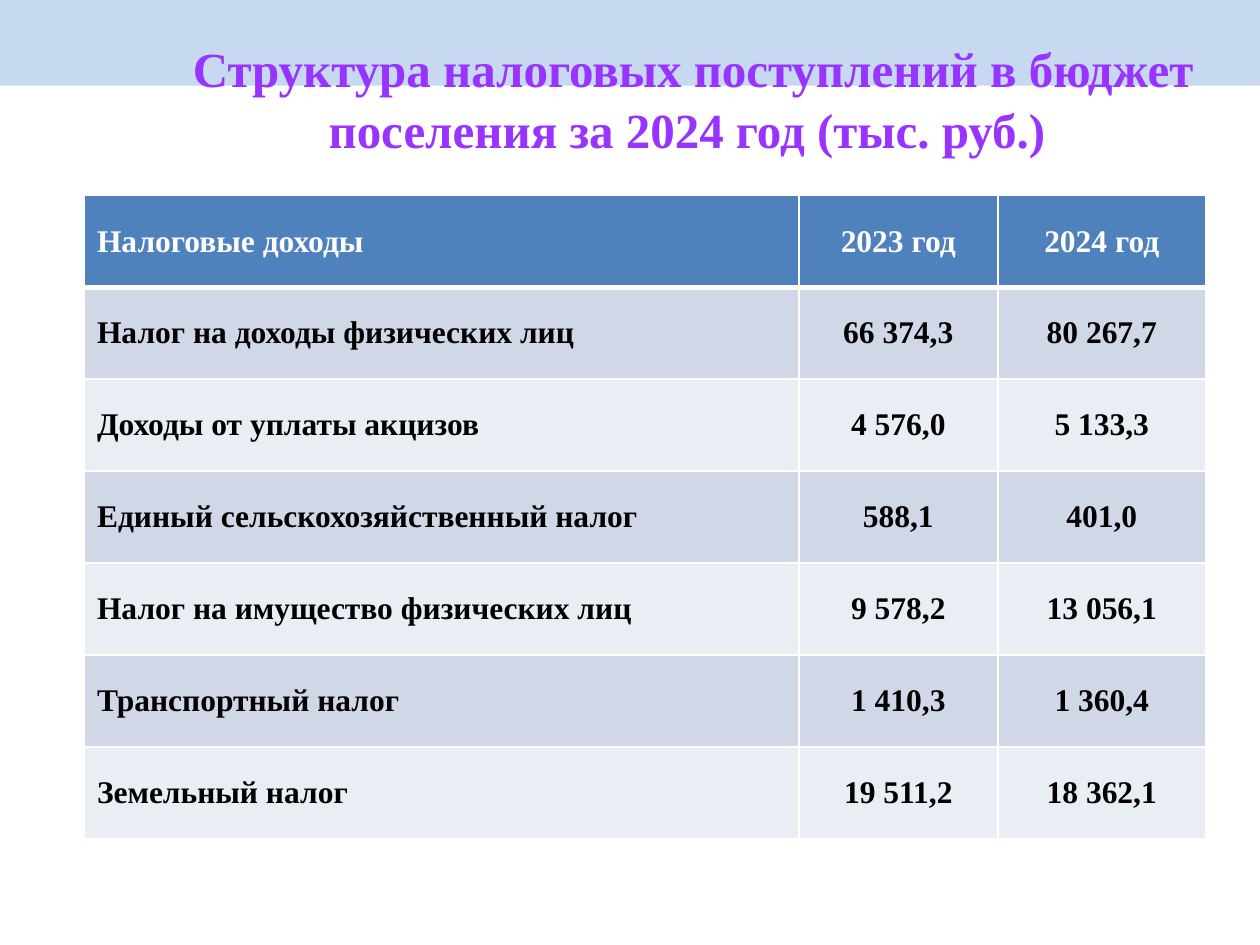
from lxml.etree import SubElement
from pptx import Presentation
from pptx.dml.color import RGBColor
from pptx.enum.shapes import MSO_SHAPE as Shape
from pptx.enum.text import MSO_ANCHOR as Anchor, MSO_AUTO_SIZE as AutoSize, PP_ALIGN as Align
from pptx.oxml import parse_xml
from pptx.oxml.ns import nsdecls, qn
from pptx.util import Inches, Pt


def color(value):
    return RGBColor.from_string(value)


def line_xml(tag, hex_color, points):
    line = parse_xml(f'<a:{tag} {nsdecls("a")} w="{int(Pt(points))}"/>')
    fill = SubElement(line, qn("a:solidFill"))
    SubElement(fill, qn("a:srgbClr")).set("val", hex_color)
    return line


class SlideBuilder:
    font = "Times New Roman"
    white, black = "FFFFFF", "000000"
    band_fill, title_color, title_outline = "C6D9F1", "9933FF", "467AB8"
    header_fill = "4F81BD"
    row_fills = ("D0D8E8", "E9EDF4")

    def __init__(self, page):
        self.page = page

    def add_text(self, para, text, size, hex_color, align):
        para.alignment = align
        span = para.add_run()
        span.text = text
        span.font.name = self.font
        span.font.size = Pt(size)
        span.font.bold = True
        span.font.color.rgb = color(hex_color)
        return span

    def band(self, left, top, width, height):
        box = self.page.shapes.add_shape(
            Shape.RECTANGLE, Inches(left), Inches(top), Inches(width), Inches(height))
        box.shadow.inherit = False
        box.fill.solid()
        box.fill.fore_color.rgb = color(self.band_fill)
        box.line.fill.background()
        # Send the band behind the title
        self.page.shapes._spTree.insert(2, box._element)

    def title(self, text, left, top, width, height):
        box = self.page.shapes.title
        box.left, box.top = Inches(left), Inches(top)
        box.width, box.height = Inches(width), Inches(height)
        frame = box.text_frame
        frame.word_wrap = True
        frame.auto_size = AutoSize.NONE
        frame.vertical_anchor = Anchor.TOP
        frame.margin_top = Inches(0.07)
        para = frame.paragraphs[0]
        para.line_spacing = 1.05
        span = self.add_text(para, text, 28, self.title_color, Align.CENTER)
        span.font._element.insert(0, line_xml("ln", self.title_outline, 0.83))

    def cell(self, cell, text, fill, hex_color, align, top, bottom):
        cell.fill.solid()
        cell.fill.fore_color.rgb = color(fill)
        cell.vertical_anchor = Anchor.MIDDLE
        self.add_text(cell.text_frame.paragraphs[0], text, 18, hex_color, align)
        borders = (("lnL", 1), ("lnR", 1), ("lnT", top), ("lnB", bottom))
        for index, (tag, points) in enumerate(borders):
            cell._tc.tcPr.insert(index, line_xml(tag, self.white, points))

    def table(self, rows, left, top, widths, row_height):
        table = self.page.shapes.add_table(
            len(rows), len(widths), Inches(left), Inches(top),
            Inches(sum(widths)), Inches(row_height * len(rows))).table
        for column, width in zip(table.columns, widths):
            column.width = Inches(width)
        for r, values in enumerate(rows):
            table.rows[r].height = Inches(row_height)
            fill = self.row_fills[(r - 1) % 2] if r else self.header_fill
            text_color = self.black if r else self.white
            label_align = Align.JUSTIFY if r > 3 else Align.LEFT
            for c, text in enumerate(values):
                self.cell(table.cell(r, c), text, fill, text_color,
                          Align.CENTER if c else label_align,
                          top=3 if r == 1 else 1, bottom=3 if r == 0 else 1)


TAX_ROWS = [
    ("Налоговые доходы", "2023 год", "2024 год"),
    ("Налог на доходы физических лиц", "66 374,3", "80 267,7"),
    ("Доходы от уплаты акцизов", "4 576,0", "5 133,3"),
    ("Единый сельскохозяйственный налог", "588,1", "401,0"),
    ("Налог на имущество физических лиц", "9 578,2", "13 056,1"),
    ("Транспортный налог", "1 410,3", "1 360,4"),
    ("Земельный налог", "19 511,2", "18 362,1"),
]


def main():
    deck = Presentation()
    deck.slide_width, deck.slide_height = Inches(10), Inches(7.5)
    builder = SlideBuilder(deck.slides.add_slide(deck.slide_layouts[5]))

    # Top band and heading
    builder.band(0, 0, 10, 0.68)
    builder.title("Структура налоговых поступлений в бюджет поселения за 2024 год (тыс. руб.) ",
                  1, 0.21, 9, 1.25)

    # Tax revenue by year
    builder.table(TAX_ROWS, 0.67, 1.55, (5.67, 1.58, 1.65), 0.73)

    deck.save("out.pptx")


if __name__ == "__main__":
    main()
